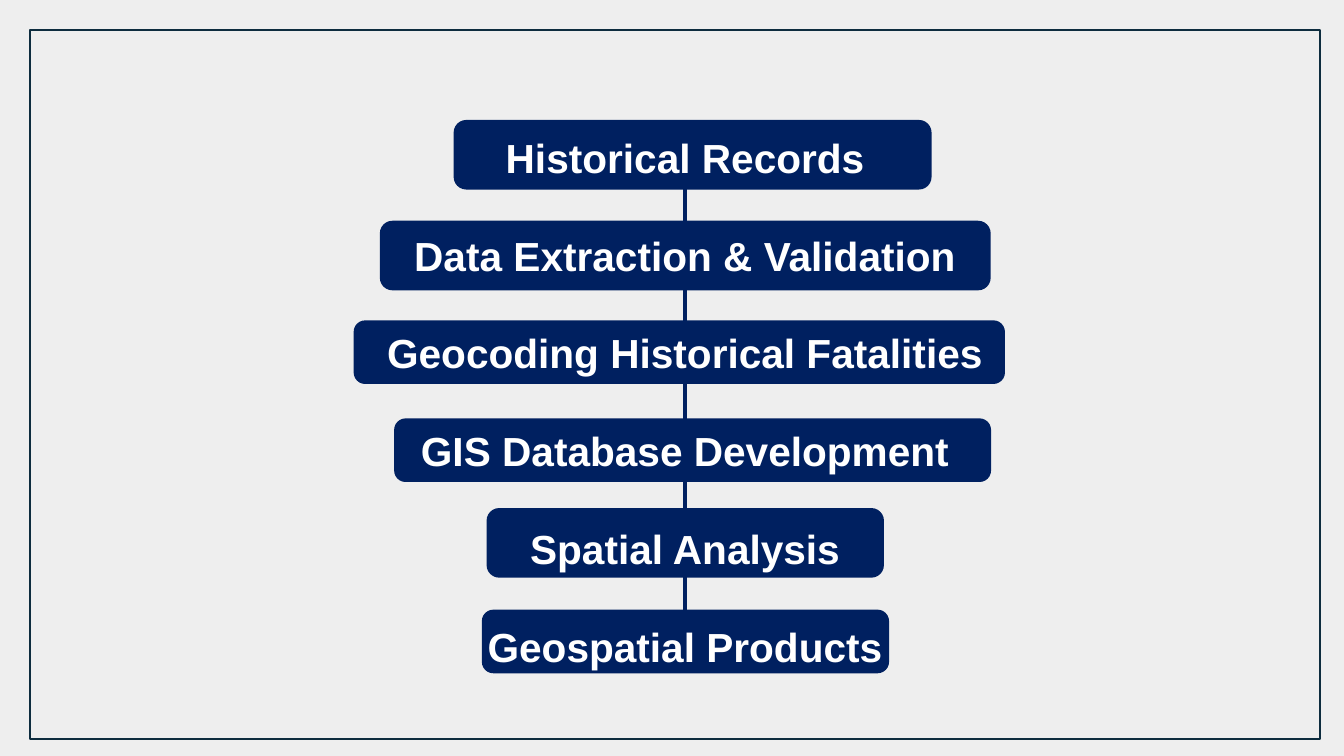
from pptx import Presentation
from pptx.dml.color import RGBColor
from pptx.enum import shapes, text
from pptx.oxml import ns
from pptx.util import Cm, Pt
from lxml import etree

COLOURS = {"page": "EEEEEE", "frame": "0D2C3E", "step": "002060", "label": "FFFFFF"}
COLOURS = {name: RGBColor.from_string(code) for name, code in COLOURS.items()}

STEPS = [
    ("Historical Records", 11.46, 3.05, 11.99, 1.7),
    ("Data Extraction & Validation", 9.6, 5.59, 15.34, 1.7),
    ("Geocoding Historical Fatalities", 8.94, 8.1, 16.36, 1.55),
    ("GIS Database Development", 9.96, 10.57, 14.99, 1.55),
    ("Spatial Analysis", 12.29, 12.83, 9.96, 1.7),
    ("Geospatial Products", 12.17, 15.39, 10.21, 1.55),
]

deck = Presentation()
deck.slide_width, deck.slide_height = Cm(33.87), Cm(19.05)
page = deck.slides.add_slide(deck.slide_layouts[6])
page.background.fill.solid()
page.background.fill.fore_color.rgb = COLOURS["page"]

spine = page.shapes.add_connector(
    shapes.MSO_CONNECTOR.STRAIGHT, Cm(17.27), Cm(3.1), Cm(17.27), Cm(16))
spine.line.color.rgb = COLOURS["step"]
spine.line.width = Pt(3)
etree.SubElement(spine.element.spPr, ns.qn("a:effectLst"))

frame = page.shapes.add_shape(
    shapes.MSO_SHAPE.RECTANGLE, Cm(0.75), Cm(0.76), Cm(32.51), Cm(17.86))
frame.shadow.inherit = False
frame.fill.background()
frame.line.color.rgb = COLOURS["frame"]
frame.line.width = Pt(1.5)

for label, left, top, width, height in STEPS:
    box = page.shapes.add_shape(
        shapes.MSO_SHAPE.ROUNDED_RECTANGLE, Cm(left), Cm(top), Cm(width), Cm(height))
    box.adjustments[0] = 0.17
    box.shadow.inherit = False
    box.fill.solid()
    box.fill.fore_color.rgb = COLOURS["step"]
    box.line.color.rgb = COLOURS["step"]
    box.line.width = Pt(1.5)

labels = page.shapes.add_textbox(Cm(9.09), Cm(3.1), Cm(16.36), Cm(13.8)).text_frame
labels.word_wrap = True
labels.vertical_anchor = text.MSO_ANCHOR.TOP
labels.margin_left = labels.margin_right = Cm(0.25)
labels.margin_top = labels.margin_bottom = Cm(0.25)
labels.text = "\n".join(step[0] for step in STEPS)
for index, para in enumerate(labels.paragraphs):
    para.alignment = text.PP_ALIGN.CENTER
    para.space_before = Pt(35 if index else 0)
    for span in para.runs:
        span.font.name = "Arial"
        span.font.size = Pt(29)
        span.font.bold = True
        span.font.color.rgb = COLOURS["label"]

deck.save("out.pptx")
